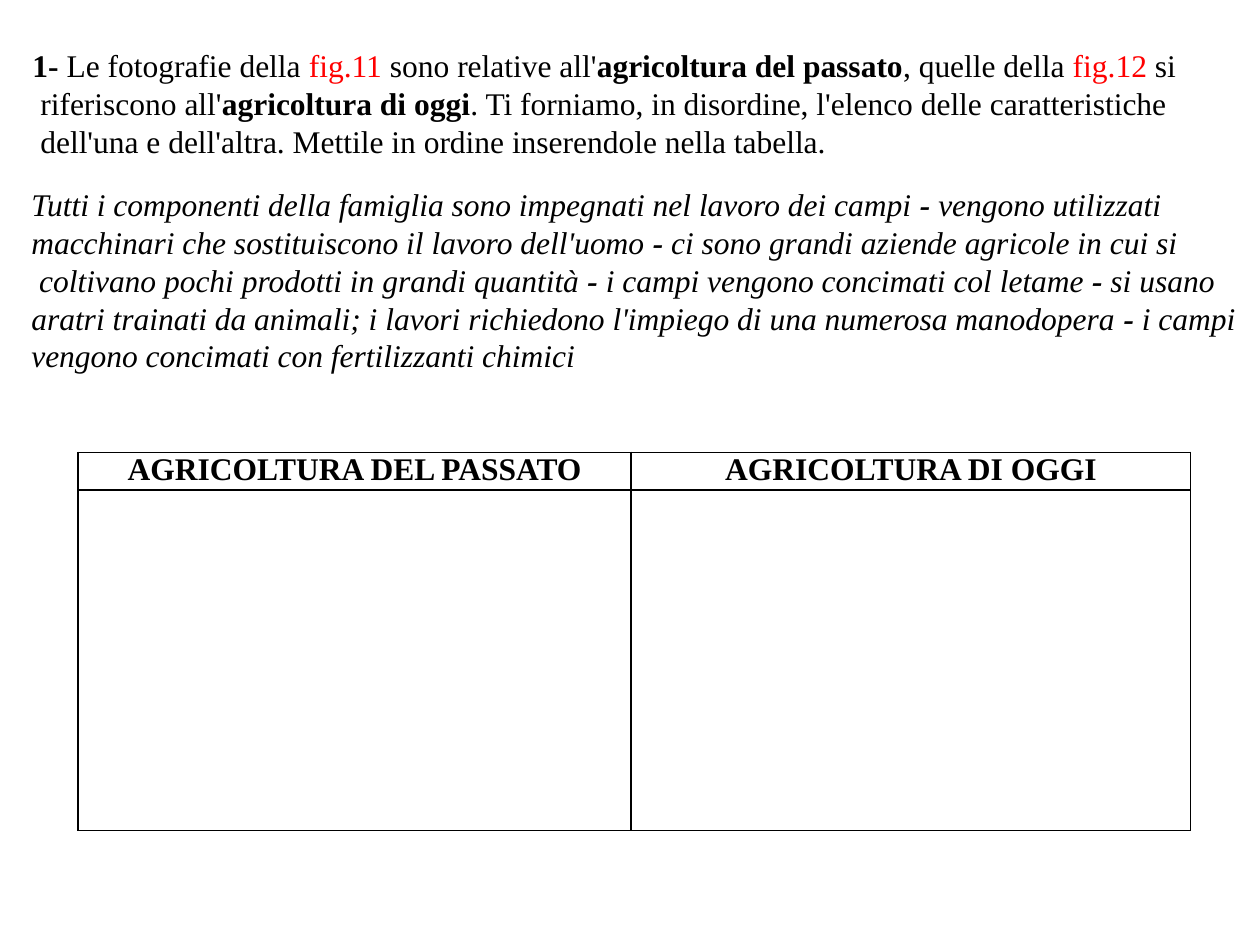
from lxml import etree
from pptx import Presentation
from pptx.dml.color import RGBColor
from pptx.enum.text import MSO_ANCHOR, MSO_AUTO_SIZE, PP_ALIGN
from pptx.oxml.ns import qn
from pptx.util import Inches, Pt

BLACK = RGBColor(0, 0, 0)
RED = RGBColor(255, 0, 0)
WHITE = RGBColor(255, 255, 255)
FONT = "Times New Roman"
SIZE = Pt(18)
CENTER = PP_ALIGN.CENTER
JUSTIFY = PP_ALIGN.JUSTIFY
MIDDLE = MSO_ANCHOR.MIDDLE
GROW = MSO_AUTO_SIZE.SHAPE_TO_FIT_TEXT

# Run styles: bold, italic, colour
PLAIN = (False, False, BLACK)
BOLD = (True, False, BLACK)
FIGURE = (False, False, RED)
ITALIC = (False, True, BLACK)
STRONG = (True, True, BLACK)

TASK = [
    [("1- ", BOLD), ("Le fotografie della ", PLAIN), ("fig.11", FIGURE),
     (" sono relative all'", PLAIN), ("agricoltura del passato", BOLD),
     (", quelle della ", PLAIN), ("fig.12", FIGURE), (" si", PLAIN)],
    [(" riferiscono all'", PLAIN), ("agricoltura di oggi", BOLD),
     (". Ti forniamo, in disordine, l'elenco delle caratteristiche", PLAIN)],
    [(" dell'una e dell'altra. Mettile in ordine inserendole nella tabella.",
      PLAIN)],
]
DASH = ("-", STRONG)
TRAITS = [
    [("Tutti i componenti della famiglia sono impegnati nel lavoro dei campi ",
      ITALIC), DASH, (" vengono utilizzati ", ITALIC)],
    [("macchinari che sostituiscono il lavoro dell'uomo ", ITALIC), DASH,
     (" ci sono grandi aziende agricole in cui si", ITALIC)],
    [(" coltivano pochi prodotti in grandi quantità ", ITALIC), DASH,
     (" i campi vengono concimati col letame ", ITALIC), DASH,
     (" si usano ", ITALIC)],
    [("aratri trainati da animali; i lavori richiedono l'impiego di una "
      "numerosa manodopera ", ITALIC), DASH, (" i campi ", ITALIC)],
    [("vengono concimati con fertilizzanti chimici", ITALIC)],
]
HEADS = ["AGRICOLTURA DEL PASSATO", "AGRICOLTURA DI OGGI"]
WIDTHS = [4.39, 4.44]
HEIGHTS = [0.3, 2.7]


def add_run(para, text, style):
    run = para.add_run()
    run.text = text
    font = run.font
    font.name, font.size = FONT, SIZE
    font.bold, font.italic, font.color.rgb = style


def add_text(slide, left, top, width, height, lines):
    box = slide.shapes.add_textbox(
        Inches(left), Inches(top), Inches(width), Inches(height))
    frame = box.text_frame
    frame.word_wrap = False
    frame.auto_size = GROW
    frame.vertical_anchor = MIDDLE
    for i, line in enumerate(lines):
        para = frame.paragraphs[0] if i == 0 else frame.add_paragraph()
        para.alignment = JUSTIFY
        for text, style in line:
            add_run(para, text, style)


def set_cell(cell):
    cell.margin_left = cell.margin_right = Inches(0.07)
    cell.margin_top = cell.margin_bottom = 0
    cell.fill.solid()
    cell.fill.fore_color.rgb = WHITE
    # Borders come before the fill in the cell properties
    props = cell._tc.get_or_add_tcPr()
    for i, side in enumerate(("lnL", "lnR", "lnT", "lnB")):
        line = etree.Element(qn("a:" + side), w=str(Pt(1)))
        fill = etree.SubElement(line, qn("a:solidFill"))
        etree.SubElement(fill, qn("a:srgbClr"), val=str(BLACK))
        props.insert(i, line)


def add_grid(slide, left, top):
    table = slide.shapes.add_table(
        len(HEIGHTS), len(WIDTHS), Inches(left), Inches(top),
        Inches(sum(WIDTHS)), Inches(sum(HEIGHTS))).table
    table.first_row = table.horz_banding = False
    for col, width in zip(table.columns, WIDTHS):
        col.width = Inches(width)
    for row, height in zip(table.rows, HEIGHTS):
        row.height = Inches(height)
    for cell in table.iter_cells():
        set_cell(cell)
    for i, head in enumerate(HEADS):
        para = table.cell(0, i).text_frame.paragraphs[0]
        para.alignment = CENTER
        add_run(para, head, BOLD)


def main():
    deck = Presentation()
    deck.slide_width, deck.slide_height = Inches(10), Inches(7.5)
    slide = deck.slides.add_slide(deck.slide_layouts[6])
    # Instructions and the traits to sort
    add_text(slide, 0.16, 0.31, 9.37, 1.01, TASK)
    add_text(slide, 0.15, 1.41, 9.85, 1.62, TRAITS)
    # Table to fill in
    add_grid(slide, 0.62, 3.59)
    deck.save("out.pptx")


if __name__ == "__main__":
    main()
